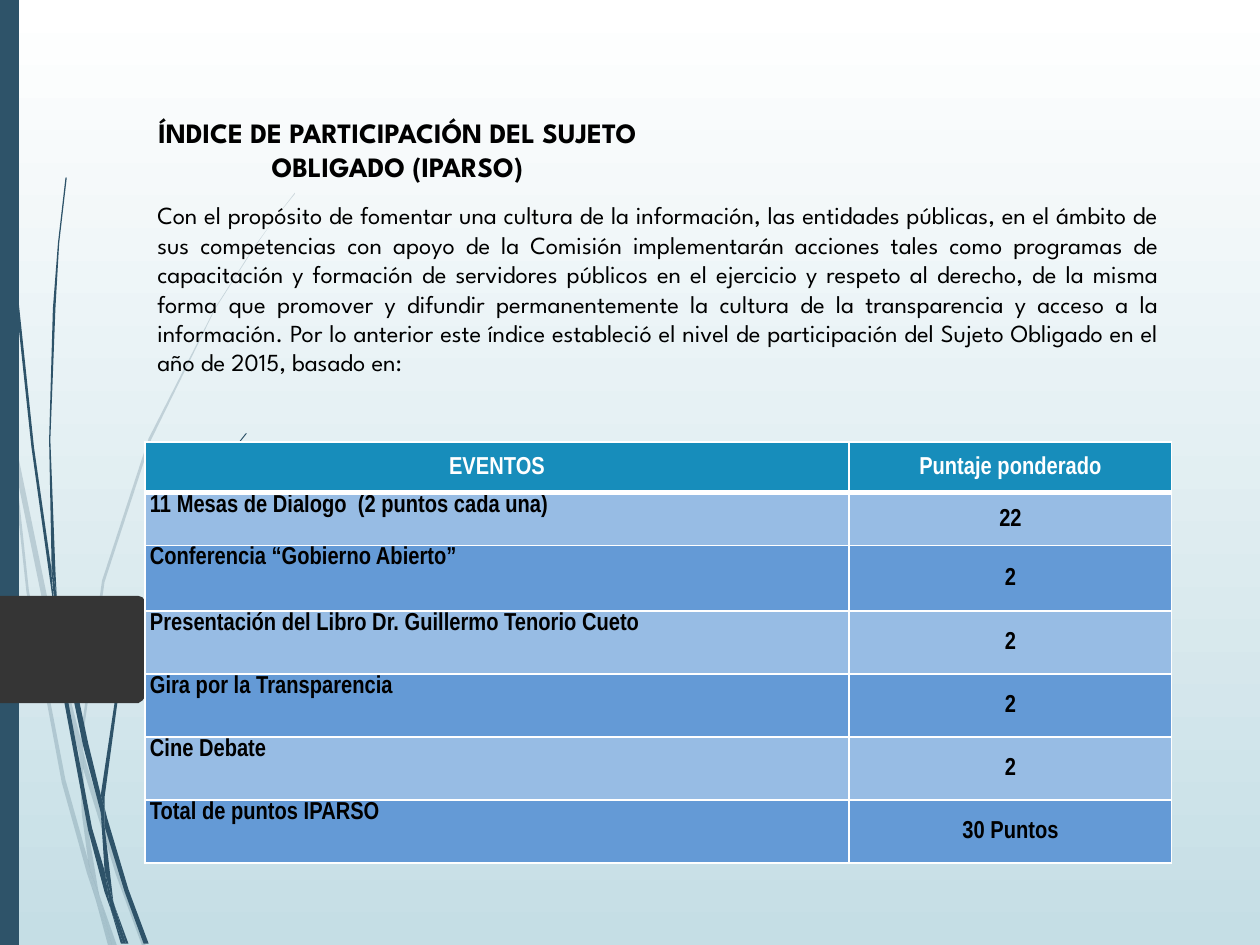
from pptx import Presentation
from pptx.util import Inches, Pt
from pptx.dml.color import RGBColor as RGB
from pptx.enum.shapes import MSO_SHAPE as Shape
from pptx.enum.text import MSO_ANCHOR as Anchor, MSO_AUTO_SIZE as Fit, PP_ALIGN as Align
from pptx.oxml.ns import qn
from lxml.etree import SubElement as Sub

HUE = {"top": "FFFFFF", "foot": "C5DEE5", "stem": "2E5369", "tab": "353535", "ink": "000000",
       "line": "FFFFFF", "head": "178DBB", "odd": "97BCE4", "even": "649AD6"}

# Outlines of the grass stems, in hundredths of an inch
PALE = [
    [(8, 350), (6, 322), (0, 282), (0, 299), (8, 344)],
    [(43, 522), (63, 599), (64, 586), (47, 520), (11, 345), (13, 376)],
    [(69, 607), (66, 596), (66, 610), (92, 694), (113, 751), (116, 751), (95, 692)],
    [(89, 751), (93, 751), (79, 711)],
    [(70, 683), (52, 619), (23, 469), (13, 376), (8, 350), (21, 470), (49, 621),
     (69, 693), (76, 714), (74, 707)],
    [(63, 599), (65, 646), (70, 683), (72, 692), (79, 711), (78, 706), (68, 646),
     (66, 610), (66, 608)],
    [(66, 584), (83, 462), (120, 349), (171, 245), (201, 198), (217, 175), (234, 154),
     (234, 153), (217, 175), (201, 197), (171, 244), (118, 348), (81, 461), (64, 584),
     (64, 586), (66, 596)],
    [(76, 714), (86, 751), (89, 751)],
    [(66, 608), (66, 610), (66, 596), (64, 586), (63, 599)],
    [(72, 692), (70, 683), (74, 707), (76, 714), (89, 751), (79, 711)],
]
DARK = [
    [(5, 110), (12, 233), (25, 355), (42, 477), (43, 481), (41, 457), (41, 453), (27, 355),
     (14, 232), (6, 109), (3, 48), (3, 0), (2, 0), (3, 48)],
    [(66, 592), (80, 645), (80, 633), (80, 631), (70, 590), (45, 472), (48, 505)],
    [(85, 649), (83, 641), (83, 656), (99, 708), (114, 749), (118, 749), (102, 706)],
    [(83, 691), (73, 657), (54, 556), (48, 505), (43, 477), (51, 557), (70, 659), (83, 708),
     (88, 722), (87, 717)],
    [(45, 472), (44, 453), (40, 349), (44, 245), (47, 193), (53, 141), (52, 141), (46, 193),
     (42, 245), (39, 349), (41, 449)],
    [(100, 749), (102, 749), (91, 719)],
    [(43, 477), (48, 505), (45, 472), (41, 449), (41, 453)],
    [(83, 633), (94, 552), (119, 476), (153, 406), (173, 374), (184, 359), (196, 344),
     (195, 344), (184, 358), (173, 373), (153, 405), (117, 474), (92, 551), (80, 631),
     (83, 641)],
    [(88, 722), (96, 749), (98, 749)],
    [(80, 645), (83, 691), (87, 706), (91, 719), (90, 716), (83, 656), (81, 651)],
    [(80, 645), (81, 651), (83, 656), (83, 641), (80, 631), (80, 633)],
    [(87, 706), (83, 691), (87, 717), (88, 722), (98, 749), (100, 749), (91, 719)],
]
TAB = [(0, 473), (110, 473), (113, 474), (142, 513), (143, 515), (142, 517), (113, 556),
       (110, 558), (0, 558)]

HEAD = "ÍNDICE DE PARTICIPACIÓN DEL SUJETO OBLIGADO (IPARSO)"
BODY = ("Con el propósito de fomentar una cultura de la información, las entidades públicas, "
        "en el ámbito de sus competencias con apoyo de la Comisión implementarán acciones "
        "tales como programas de capacitación y formación de servidores públicos en el "
        "ejercicio y respeto al derecho, de la misma forma que promover y difundir "
        "permanentemente la cultura de la transparencia y acceso a la información. Por lo "
        "anterior este índice estableció el nivel de participación del Sujeto Obligado en el "
        "año de 2015, basado en:")
ROWS = [("EVENTOS", "Puntaje ponderado"),
        ("11 Mesas de Dialogo  (2 puntos cada una)", "22"),
        ("Conferencia “Gobierno Abierto”", "2"),
        ("Presentación del Libro Dr. Guillermo Tenorio Cueto", "2"),
        ("Gira por la Transparencia", "2"),
        ("Cine Debate", "2"),
        ("Total de puntos IPARSO", "30 Puntos")]


class Deck:
    font, cell = "League Spartan", "Arial Narrow"

    def __init__(self, wide, high):
        self.prs = Presentation()
        self.prs.slide_width, self.prs.slide_height = Inches(wide), Inches(high)
        self.slide = self.prs.slides.add_slide(self.prs.slide_layouts[5])
        self.shapes = self.slide.shapes

    def back(self, top, foot):
        fill = self.slide.background.fill
        fill.gradient()
        fill.gradient_angle = 270
        for stop, hue in zip(fill.gradient_stops, (top, foot)):
            stop.color.rgb = RGB.from_string(HUE[hue])

    def paint(self, shape, hue, alpha=100):
        shape.shadow.inherit = False
        shape.fill.solid()
        shape.fill.fore_color.rgb = RGB.from_string(HUE[hue])
        shape.line.fill.background()
        if alpha < 100:
            clr = shape._element.spPr.find(qn("a:solidFill"))[0]
            Sub(clr, qn("a:alpha"), val=str(alpha * 1000))

    def free(self, pts, hue, alpha=100, home=None):
        pen = (home or self.shapes).build_freeform(*pts[0], scale=Inches(0.01))
        pen.add_line_segments(pts[1:], close=True)
        self.paint(pen.convert_to_shape(), hue, alpha)

    def grass(self, stems, alpha=100):
        group = self.shapes.add_group_shape()
        for pts in stems:
            self.free(pts, "stem", alpha, group.shapes)

    def bar(self, x, y, w, h, hue):
        box = [Inches(v) for v in (x, y, w, h)]
        self.paint(self.shapes.add_shape(Shape.RECTANGLE, *box), hue)

    def label(self, frame, text, size, align, hue="ink", bold=False, font=None):
        frame.text = text
        frame.word_wrap = True
        para = frame.paragraphs[0]
        para.alignment = align
        for run in para.runs:
            run.font.size, run.font.bold = Pt(size), bold
            run.font.name = font or self.font
            run.font.color.rgb = RGB.from_string(HUE[hue])
        return para

    def text(self, x, y, w, h, text, size):
        box = self.shapes.add_textbox(*[Inches(v) for v in (x, y, w, h)])
        self.label(box.text_frame, text, size, Align.JUSTIFY)

    def title(self, x, y, w, h, text, size):
        head = self.shapes.title
        head.left, head.top, head.width, head.height = [Inches(v) for v in (x, y, w, h)]
        self.label(head.text_frame, text, size, Align.CENTER, bold=True)
        head.text_frame.auto_size = Fit.NONE
        head.text_frame.vertical_anchor = Anchor.BOTTOM
        self.shapes._spTree.append(head._element)  # bring to front

    def edge(self, cell, foot):
        props = cell._tc.get_or_add_tcPr()
        for side, width in (("L", 1), ("R", 1), ("T", 1), ("B", foot)):
            line = Sub(props, qn("a:ln" + side), w=str(Pt(width)))
            Sub(Sub(line, qn("a:solidFill")), qn("a:srgbClr"), val=HUE["line"])

    def table(self, x, y, cols, highs, rows, size):
        box = [Inches(v) for v in (x, y, sum(cols), sum(highs))]
        grid = self.shapes.add_table(len(rows), len(cols), *box).table
        for col, wide in zip(grid.columns, cols):
            col.width = Inches(wide)
        for r, (row, high) in enumerate(zip(rows, highs)):
            grid.rows[r].height = Inches(high)
            hue = "head" if r == 0 else "odd" if r % 2 else "even"
            for c, text in enumerate(row):
                cell = grid.cell(r, c)
                event = r > 0 and c == 0
                self.edge(cell, 1 if r else 3)
                cell.fill.solid()
                cell.fill.fore_color.rgb = RGB.from_string(HUE[hue])
                cell.margin_left = cell.margin_right = Inches(0.04)
                cell.margin_top = cell.margin_bottom = 0
                cell.vertical_anchor = Anchor.TOP if event else Anchor.MIDDLE
                para = self.label(cell.text_frame, text, size,
                                  Align.JUSTIFY if event else Align.CENTER,
                                  "ink" if r else "line", True, self.cell)
                para.line_spacing = 1.07


def main():
    deck = Deck(10, 7.5)
    # Backdrop
    deck.back("top", "foot")
    deck.grass(PALE, 20)
    deck.grass(DARK)
    deck.bar(0, 0, 0.15, 7.5, "stem")
    deck.free(TAB, "tab")
    # Words
    deck.text(1.15, 1.54, 8.15, 1.75, BODY, 14)
    deck.title(1.03, 0.68, 4.25, 0.82, HEAD, 16)
    # Scores
    deck.table(1.15, 3.51, [5.59, 2.56], [0.4, 0.42, 0.52] + [0.5] * 4, ROWS, 14)
    deck.prs.save("out.pptx")


if __name__ == "__main__":
    main()
